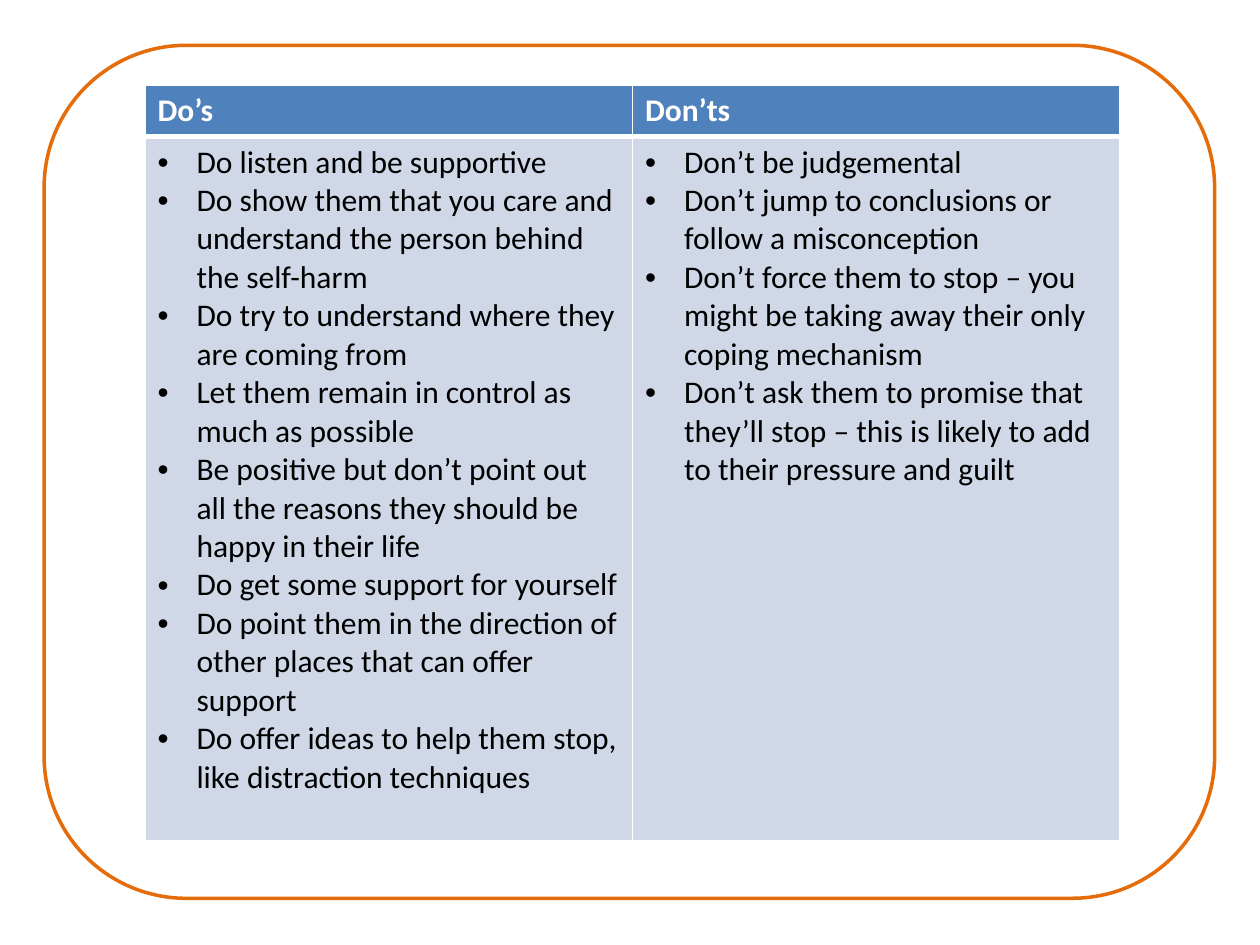
"""Build a slide with a framed table of do's and don'ts."""
from lxml import etree
from pptx import Presentation
from pptx import util as u
from pptx.dml.color import RGBColor
from pptx.enum import shapes
from pptx.oxml.ns import qn

HUES = {"frame": "E46C0A", "head": "4F81BD", "body": "D0D8E8",
        "white": "FFFFFF", "black": "000000"}
DOS = [
    "Do listen and be supportive",
    "Do show them that you care and understand the person behind the self-harm",
    "Do try to understand where they are coming from",
    "Let them remain in control as much as possible",
    "Be positive but don’t point out all the reasons they should be happy in their life",
    "Do get some support for yourself",
    "Do point them in the direction of other places that can offer support",
    "Do offer ideas to help them stop, like distraction techniques",
]
DONTS = [
    "Don’t be judgemental",
    "Don’t jump to conclusions or follow a misconception",
    "Don’t force them to stop – you might be taking away their only coping mechanism",
    "Don’t ask them to promise that they’ll stop – this is likely to add to their pressure and guilt",
]


def hue(name):
    return RGBColor.from_string(HUES[name])


class Deck:
    """Hold the text style and the current slide."""

    def __init__(self, slide):
        self.slide = slide
        self.style = {"name": "Calibri", "size": u.Pt(18)}

    def frame(self, *box):
        item = self.slide.shapes.add_shape(
            shapes.MSO_SHAPE.ROUNDED_RECTANGLE, *map(u.Inches, box))
        item.shadow.inherit = False
        item.fill.background()
        item.line.color.rgb = hue("frame")
        item.line.width = u.Pt(2)

    def table(self, cols, box, highs):
        grid = self.slide.shapes.add_table(
            2, len(cols), *map(u.Inches, box)).table
        for row, high in zip(grid.rows, highs):
            row.height = u.Inches(high)
        for c, (head, items) in enumerate(cols):
            self.cell(grid.cell(0, c), [head], "head", "white", True)
            self.cell(grid.cell(1, c), items, "body", "black", False)

    def cell(self, cell, lines, fill, ink, head):
        props = cell._tc.get_or_add_tcPr()
        sides = {"L": 1, "R": 1, "T": 1 if head else 3, "B": 3 if head else 1}
        for side, width in sides.items():
            edge = etree.SubElement(props, qn(f"a:ln{side}"), w=str(u.Pt(width)))
            paint = etree.SubElement(edge, qn("a:solidFill"))
            etree.SubElement(paint, qn("a:srgbClr"), val=HUES["white"])
        cell.fill.solid()
        cell.fill.fore_color.rgb = hue(fill)
        frame = cell.text_frame
        for i, line in enumerate(lines):
            para = frame.add_paragraph() if i else frame.paragraphs[0]
            self.text(para, line, ink, head)
            if not head:
                self.bullet(para)

    def text(self, para, line, ink, bold):
        run = para.add_run()
        run.text = line
        for key, val in {**self.style, "bold": bold}.items():
            setattr(run.font, key, val)
        run.font.color.rgb = hue(ink)

    def bullet(self, para):
        props = para._p.get_or_add_pPr()
        dent = u.Inches(0.31)
        props.set("marL", str(dent))
        props.set("indent", str(-dent))
        etree.SubElement(props, qn("a:buFont"), typeface="Arial")
        etree.SubElement(props, qn("a:buChar"), char="•")


def main():
    prs = Presentation()
    prs.slide_width, prs.slide_height = u.Inches(10), u.Inches(7.5)
    deck = Deck(prs.slides.add_slide(prs.slide_layouts[6]))
    deck.frame(0.35, 0.36, 9.29, 6.77)
    deck.table([("Do’s", DOS), ("Don’ts", DONTS)],
               (1.15, 0.68, 7.74, 5.99), (0.4, 5.59))
    prs.save("out.pptx")


if __name__ == "__main__":
    main()
